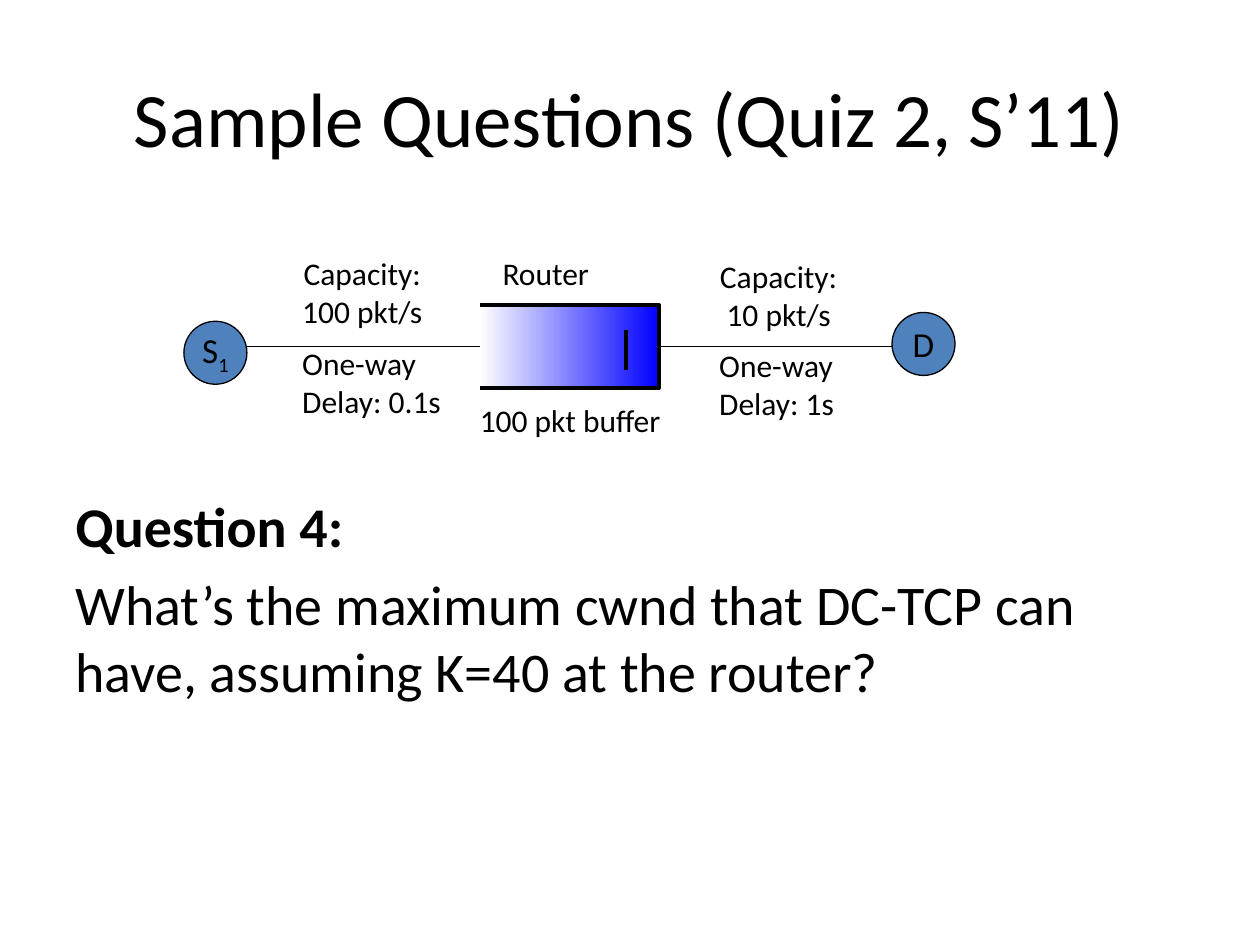
from lxml import etree
from pptx import Presentation
from pptx.dml.color import RGBColor
from pptx.enum.shapes import MSO_CONNECTOR, MSO_SHAPE
from pptx.enum.text import MSO_ANCHOR as Anchor, PP_ALIGN as Align
from pptx.oxml.ns import qn
from pptx.util import Inches, Pt

COLORS = {"ink": "000000", "node": "4F81BD", "empty": "FFFFFF", "full": "0000FF"}
FONT = "Calibri"


def rgb(name):
    return RGBColor.from_string(COLORS[name])


def set_outline(shape, width):
    shape.line.color.rgb = rgb("ink")
    shape.line.width = Pt(width)


def add_run(paragraph, text, size, bold=False, baseline=None):
    run = paragraph.add_run()
    run.text = text
    run.font.color.rgb = rgb("ink")
    for key, value in {"name": FONT, "size": Pt(size), "bold": bold}.items():
        setattr(run.font, key, value)
    if baseline:
        run._r.get_or_add_rPr().set("baseline", str(baseline * 1000))


def add_text(slide, box, lines, size, align=Align.LEFT, anchor=Anchor.TOP,
             wrap=False, before=0, bold_first=False):
    frame = slide.shapes.add_textbox(*map(Inches, box)).text_frame
    frame.word_wrap = wrap
    frame.vertical_anchor = anchor
    for i, line in enumerate(lines):
        paragraph = frame.add_paragraph() if i else frame.paragraphs[0]
        paragraph.alignment = align
        paragraph.space_before = Pt(before)
        add_run(paragraph, line, size, bold=bold_first and i == 0)


def add_line(shapes, start, end, width):
    line = shapes.add_connector(MSO_CONNECTOR.STRAIGHT, *map(Inches, start + end))
    set_outline(line, width)
    etree.SubElement(line._element.spPr, qn("a:effectLst"))


def add_host(slide, left, top, letter, subscript=""):
    host = slide.shapes.add_shape(
        MSO_SHAPE.OVAL, Inches(left), Inches(top), Inches(0.5), Inches(0.5))
    host.shadow.inherit = False
    host.fill.solid()
    host.fill.fore_color.rgb = rgb("node")
    set_outline(host, 0.75)
    frame = host.text_frame
    frame.word_wrap = False
    frame.vertical_anchor = Anchor.MIDDLE
    name = frame.paragraphs[0]
    name.alignment = Align.CENTER
    add_run(name, letter, 20)
    if subscript:
        add_run(name, subscript, 20, baseline=-25)


def add_buffer(slide, left, top, width, height):
    """Queue that is open on the left, with its marking threshold."""
    shapes = slide.shapes.add_group_shape().shapes
    right, bottom = left + width, top + height
    outline = shapes.build_freeform(Inches(left), Inches(top))
    outline.add_line_segments(
        [(Inches(x), Inches(y)) for x, y in
         ((right, top), (right, bottom), (left, bottom))], close=False)
    queue = outline.convert_to_shape()
    queue.shadow.inherit = False
    queue.fill.gradient()
    queue.fill.gradient_angle = 0
    for stop, color, position in zip(queue.fill.gradient_stops, ("empty", "full"), (0, 1)):
        stop.color.rgb = rgb(color)
        stop.position = position
    set_outline(queue, 2.25)
    threshold = right - 0.26
    add_line(shapes, (threshold, top + 0.2), (threshold, bottom - 0.14), 2.25)


def add_network(slide, left, top):
    """Source, router buffer and destination, with their link labels."""
    link_y = top + 0.78
    for start, end in ((0.5, 2.35), (3.75, 5.62)):
        add_line(slide.shapes, (left + start, link_y), (left + end, link_y), 0.75)
    add_host(slide, left, top + 0.58, "S", "1")
    add_host(slide, left + 5.62, top + 0.51, "D")
    add_buffer(slide, left + 2.35, top + 0.45, 1.42, 0.66)
    labels = [
        (0.82, 0, 1.19, ["Capacity:", "100 pkt/s"], Align.CENTER),
        (0.84, 0.71, 1.32, ["One-way", "Delay: 0.1s"], Align.LEFT),
        (2.43, 0, 0.9, ["Router"], Align.LEFT),
        (2.25, 1.16, 1.66, ["100 pkt buffer"], Align.LEFT),
        (4.15, 0.02, 1.14, ["Capacity:", "10 pkt/s"], Align.CENTER),
        (4.15, 0.73, 1.13, ["One-way", "Delay: 1s"], Align.LEFT),
    ]
    for x, y, width, lines, align in labels:
        height = 0.1 + 0.3 * len(lines)
        add_text(slide, (left + x, top + y, width, height), lines, 18, align)


def add_title(slide, box):
    add_text(slide, box, ["Sample Questions (Quiz 2, S’11)"], 44,
             Align.CENTER, Anchor.MIDDLE, wrap=True)


def add_question(slide, box):
    add_text(slide, box, [
        "Question 4:",
        "What’s the maximum cwnd that DC-TCP can have, assuming K=40 at the router?",
    ], 32, wrap=True, before=6.4, bold_first=True)


def main():
    deck = Presentation()
    deck.slide_width, deck.slide_height = Inches(10), Inches(7.5)
    slide = deck.slides.add_slide(deck.slide_layouts[6])
    add_title(slide, (0.5, 0.3, 9, 1.25))
    add_question(slide, (0.5, 3.85, 9, 2.85))
    add_network(slide, 1.46, 1.97)
    deck.save("out.pptx")


if __name__ == "__main__":
    main()
